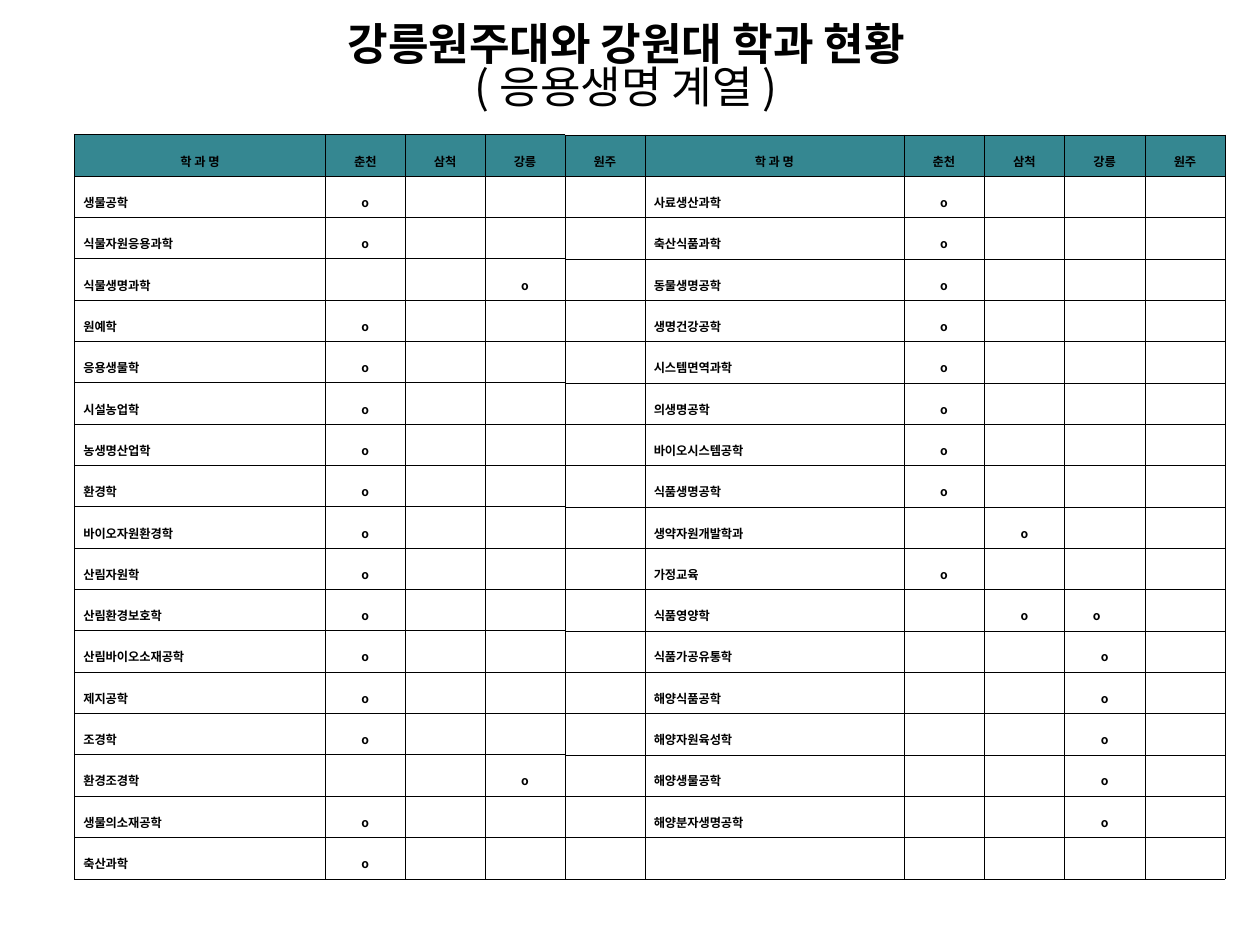
from lxml import etree
from pptx import Presentation
from pptx.dml.color import RGBColor
from pptx.enum.text import MSO_ANCHOR, PP_ALIGN
from pptx.oxml.ns import qn
from pptx.util import Cm, Pt

MID = MSO_ANCHOR.MIDDLE
CENTER = PP_ALIGN.CENTER
JUST = PP_ALIGN.JUSTIFY
FONT = "Noto Sans CJK KR"
HUES = {"ink": "000000", "head": "358791"}
BOX = {"word_wrap": True, "vertical_anchor": MID}
CELL = {"margin_left": Cm(0.18), "margin_right": Cm(0.18),
        "margin_top": Cm(0.1), "margin_bottom": Cm(0.1), "vertical_anchor": MID}
BIG = {"name": FONT, "size": Pt(25.2)}
SMALL = {"name": FONT, "size": Pt(7), "bold": True}
THIN, THICK = Pt(0.28), Pt(0.56)
TOWNS = ["춘천", "삼척", "강릉", "원주"]
LEFT = [
    ("생물공학", "춘천"), ("식물자원응용과학", "춘천"), ("식물생명과학", "강릉"),
    ("원예학", "춘천"), ("응용생물학", "춘천"), ("시설농업학", "춘천"),
    ("농생명산업학", "춘천"), ("환경학", "춘천"), ("바이오자원환경학", "춘천"),
    ("산림자원학", "춘천"), ("산림환경보호학", "춘천"), ("산림바이오소재공학", "춘천"),
    ("제지공학", "춘천"), ("조경학", "춘천"), ("환경조경학", "강릉"),
    ("생물의소재공학", "춘천"), ("축산과학", "춘천"),
]
RIGHT = [
    ("사료생산과학", "춘천"), ("축산식품과학", "춘천"), ("동물생명공학", "춘천"),
    ("생명건강공학", "춘천"), ("시스템면역과학", "춘천"), ("의생명공학", "춘천"),
    ("바이오시스템공학", "춘천"), ("식품생명공학", "춘천"), ("생약자원개발학과", "삼척"),
    ("가정교육", "춘천"), ("식품영양학", "삼척 강릉"), ("식품가공유통학", "강릉"),
    ("해양식품공학", "강릉"), ("해양자원육성학", "강릉"), ("해양생물공학", "강릉"),
    ("해양분자생명공학", "강릉"), ("", ""),
]


def style(thing, look):
    for key, val in look.items():
        setattr(thing, key, val)


def write(para, text, look):
    run = para.add_run()
    run.text = text
    style(run.font, look)
    run.font.color.rgb = RGBColor.from_string(HUES["ink"])


deck = Presentation()
deck.slide_width, deck.slide_height = Cm(25.4), Cm(19.05)
slide = deck.slides.add_slide(deck.slide_layouts[6])

frame = slide.shapes.add_textbox(Cm(0.56), Cm(0.2), Cm(24.13), Cm(2.39)).text_frame
style(frame, BOX)
para = frame.paragraphs[0]
style(para, {"alignment": CENTER, "line_spacing": 0.8})
write(para, "강릉원주대와 강원대 학과 현황", {**BIG, "bold": True})
para.add_line_break()
write(para, "( 응용생명 계열 )", {**BIG, "bold": False})

rows = [["학 과 명", *TOWNS] * 2]
for pair in zip(LEFT, RIGHT):
    row = []
    for name, sites in pair:
        row += [name] + ["o" if town in sites.split() else "" for town in TOWNS]
    rows.append(row)

wides = [5.06] + [1.61] * 4 + [5.22] + [1.62] * 4
last = len(rows) - 1
grid = slide.shapes.add_table(len(rows), len(wides), Cm(1.5), Cm(2.72),
                              Cm(sum(wides)), Cm(15.01)).table
style(grid, {"first_row": False, "horz_banding": False})
for col, wide in zip(grid.columns, wides):
    col.width = Cm(wide)
for line in grid.rows:
    line.height = Cm(15.01 / len(rows))

for r, row in enumerate(rows):
    for c, text in enumerate(row):
        cell = grid.cell(r, c)
        style(cell, CELL)
        para = cell.text_frame.paragraphs[0]
        body = r > 0 and c % 5 == 0
        style(para, {"alignment": JUST if body else CENTER, "line_spacing": 1.6})
        if text:
            write(para, text, SMALL)
        else:
            etree.SubElement(para._p, qn("a:endParaRPr"), sz="700")
        thin = {"L": c > 3, "R": c > 2, "T": c > 3 or r == 1,
                "B": c > 3 or r in (0, last)}
        prop = cell._tc.get_or_add_tcPr()
        for side, fine in thin.items():
            edge = etree.SubElement(prop, qn("a:ln" + side), w=str(THIN if fine else THICK))
            fill = etree.SubElement(edge, qn("a:solidFill"))
            etree.SubElement(fill, qn("a:srgbClr"), val=HUES["ink"])
        if r == 0:
            cell.fill.solid()
            cell.fill.fore_color.rgb = RGBColor.from_string(HUES["head"])
        else:
            cell.fill.background()

grid.cell(11, 8).margin_right = Cm(0.5)
deck.save("out.pptx")
